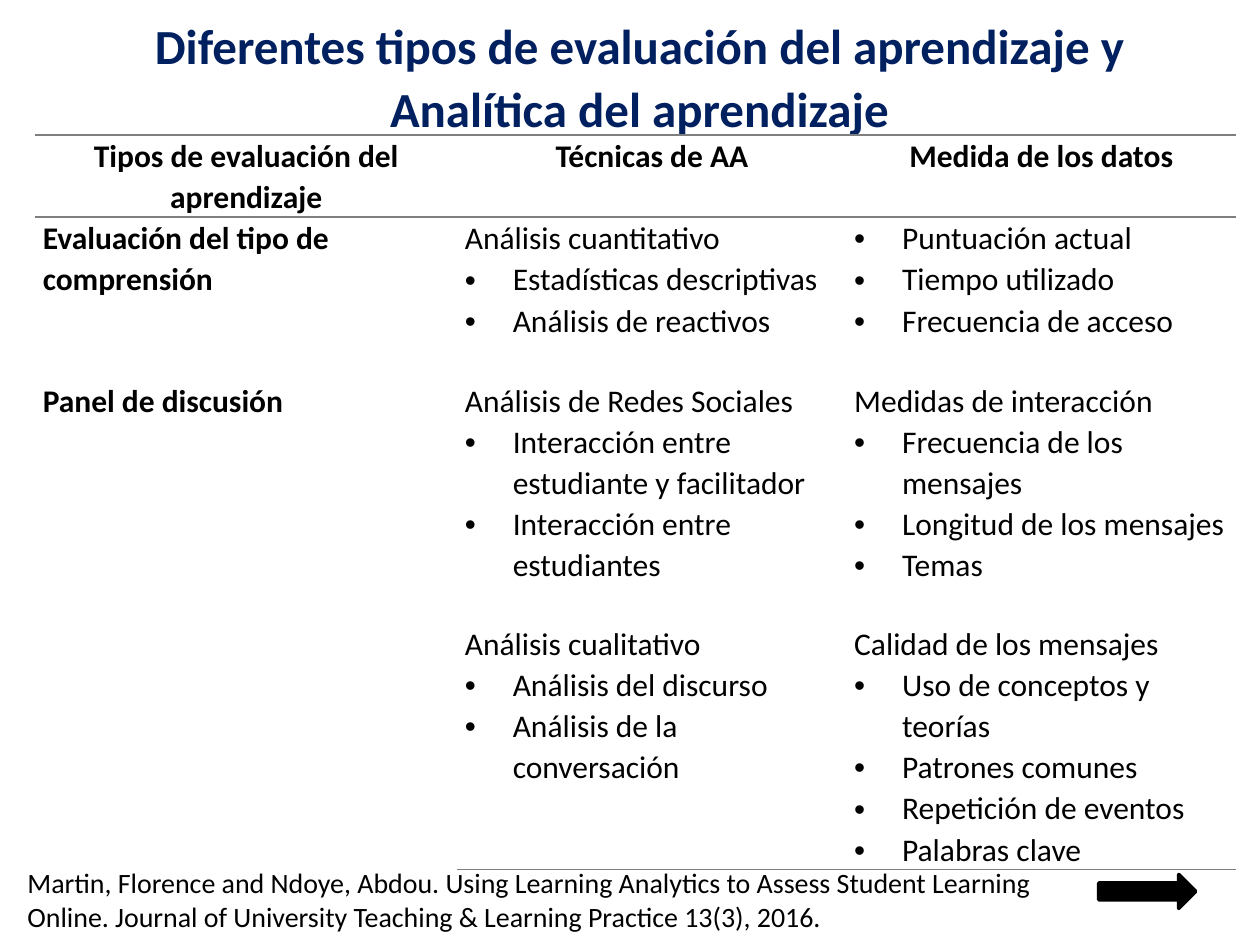
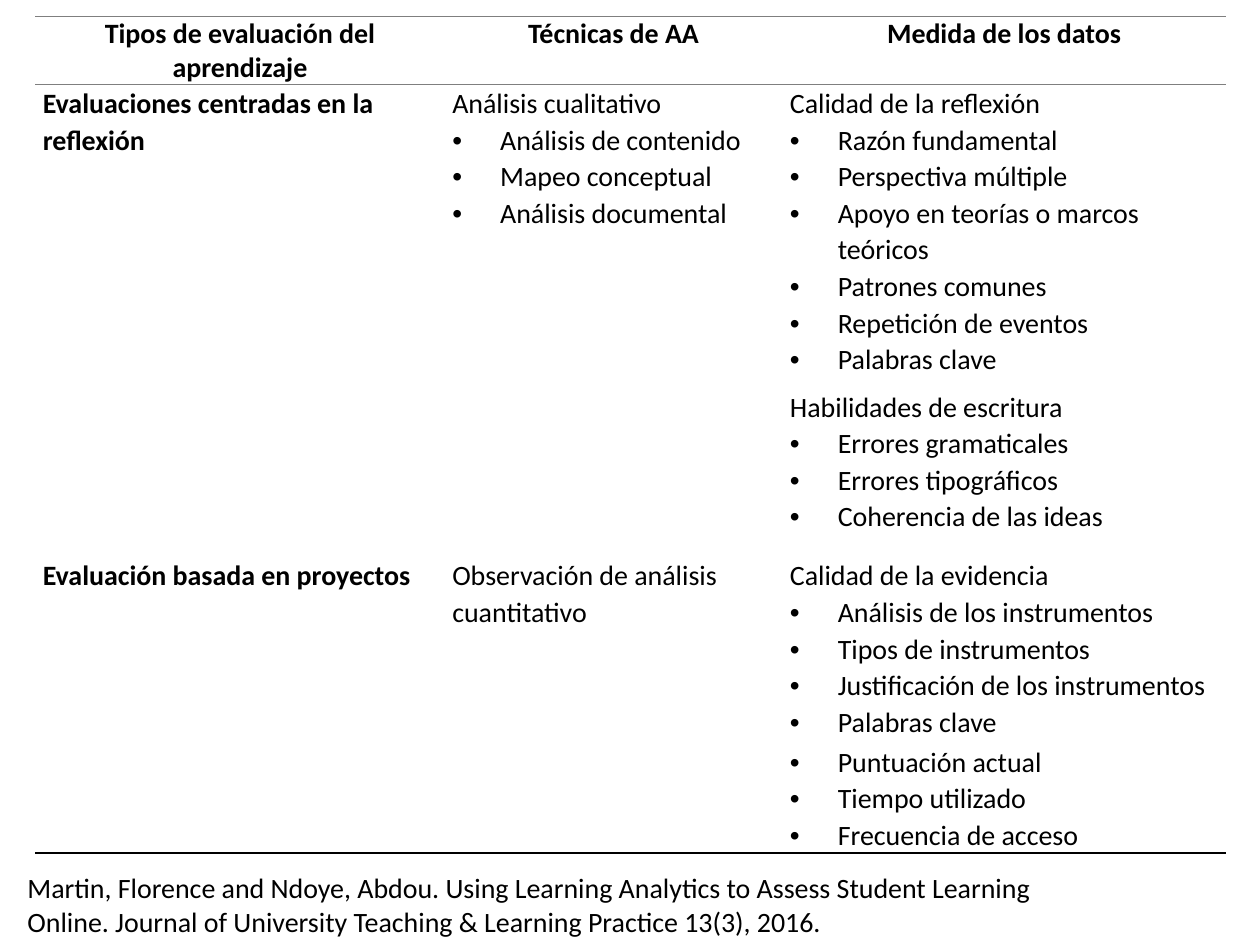
from lxml.etree import SubElement
from pptx import Presentation
from pptx.dml.color import RGBColor
from pptx.enum.shapes import MSO_SHAPE
from pptx.enum.text import MSO_ANCHOR, PP_ALIGN
from pptx.oxml import parse_xml
from pptx.oxml.ns import nsdecls, qn
from pptx.util import Inches, Pt

NAVY = RGBColor(0x00, 0x20, 0x60)
BLACK = RGBColor(0x00, 0x00, 0x00)
GRAY = RGBColor(0x7F, 0x7F, 0x7F)

FONT = "Calibri"
LOOSE = 1.07
HANGING = Inches(0.38)
PLAIN_TABLE_STYLE = "{2D5ABB26-0587-4C30-8999-92F81FD0307C}"
TITLE_ONLY, BLANK = 5, 6

HEADERS = ["Tipos de evaluación del aprendizaje", "Técnicas de AA", "Medida de los datos"]
CITATION = ("Martin, Florence and Ndoye, Abdou. Using Learning Analytics to Assess Student "
            "Learning Online. Journal of University Teaching & Learning Practice 13(3), 2016.")

# Each cell holds a lead line and its bullet points
EMPTY = ("", [])
COMPREHENSION_ROWS = [
    [("Evaluación del tipo de comprensión", []),
     ("Análisis cuantitativo", ["Estadísticas descriptivas", "Análisis de reactivos"]),
     ("", ["Puntuación actual", "Tiempo utilizado", "Frecuencia de acceso"])],
    [("Panel de discusión", []),
     ("Análisis de Redes Sociales",
      ["Interacción entre estudiante y facilitador", "Interacción entre estudiantes"]),
     ("Medidas de interacción",
      ["Frecuencia de los mensajes", "Longitud de los mensajes", "Temas"])],
    [EMPTY,
     ("Análisis cualitativo", ["Análisis del discurso", "Análisis de la conversación"]),
     ("Calidad de los mensajes",
      ["Uso de conceptos y teorías", "Patrones comunes", "Repetición de eventos",
       "Palabras clave"])],
]
REFLECTION_ROWS = [
    [("Evaluaciones centradas en la reflexión", []),
     ("Análisis cualitativo",
      ["Análisis de contenido", "Mapeo conceptual", "Análisis documental"]),
     ("Calidad de la reflexión",
      ["Razón fundamental", "Perspectiva múltiple", "Apoyo en teorías o marcos teóricos",
       "Patrones comunes", "Repetición de eventos", "Palabras clave"])],
    [EMPTY, EMPTY,
     ("Habilidades de escritura",
      ["Errores gramaticales", "Errores tipográficos", "Coherencia de las ideas"])],
    [("Evaluación basada en proyectos", []),
     ("Observación de análisis cuantitativo", []),
     ("Calidad de la evidencia",
      ["Análisis de los instrumentos", "Tipos de instrumentos",
       "Justificación de los instrumentos", "Palabras clave"])],
    [EMPTY, EMPTY,
     ("", ["Puntuación actual", "Tiempo utilizado", "Frecuencia de acceso"])],
]


def set_values(target, values):
    for name, value in values.items():
        setattr(target, name, value)


class Pages:
    """Shared style and current page, on a grid of 100 columns by 75 rows."""

    def __init__(self):
        self.deck = Presentation()
        set_values(self.deck, {"slide_width": Inches(10), "slide_height": Inches(7.5)})
        self.column = self.deck.slide_width / 100
        self.row = self.deck.slide_height / 75
        self.page = None

    def area(self, left, top, width, height):
        return [round(left * self.column), round(top * self.row),
                round(width * self.column), round(height * self.row)]

    def add_page(self, layout):
        self.page = self.deck.slides.add_slide(self.deck.slide_layouts[layout])

    def add_text(self, para, text, size, color=BLACK, bold=False, bullet=False, **layout):
        set_values(para, layout)
        span = para.add_run()
        span.text = text
        set_values(span.font, {"name": FONT, "size": Pt(size), "bold": bold})
        span.font.color.rgb = color
        if bullet:
            properties = para._p.get_or_add_pPr()
            properties.set("marL", str(HANGING))
            properties.set("indent", str(-HANGING))
            SubElement(properties, qn("a:buFont"), typeface="Arial")
            SubElement(properties, qn("a:buChar"), char="•")

    def title(self, text, *place):
        box = self.page.shapes.title
        set_values(box, dict(zip(("left", "top", "width", "height"), self.area(*place))))
        set_values(box.text_frame, {"vertical_anchor": MSO_ANCHOR.TOP, "word_wrap": True})
        self.add_text(box.text_frame.paragraphs[0], text, 28, NAVY, True,
                      alignment=PP_ALIGN.CENTER, line_spacing=LOOSE, space_after=Pt(6))

    def citation(self, top):
        box = self.page.shapes.add_textbox(*self.area(1.2, top, 84.3, 6.4))
        box.text_frame.word_wrap = True
        self.add_text(box.text_frame.paragraphs[0], CITATION, 16)

    def arrow(self, *place):
        arrow = self.page.shapes.add_shape(MSO_SHAPE.RIGHT_ARROW, *self.area(*place))
        arrow.shadow.inherit = False
        arrow.fill.solid()
        arrow.fill.fore_color.rgb = BLACK
        arrow.line.color.rgb = BLACK
        arrow.line.width = Pt(2)

    def border(self, cell, side, color):
        line = parse_xml(
            f'<a:{side} {nsdecls("a")} w="12700"><a:solidFill><a:srgbClr val="{color}"/>'
            f'</a:solidFill></a:{side}>')
        cell._tc.get_or_add_tcPr().insert(0, line)

    def fill_cell(self, cell, content, size, bold):
        lead, points = content
        lines = [(lead, False)] if lead else []
        lines += [(point, True) for point in points]
        for index, (text, bullet) in enumerate(lines):
            frame = cell.text_frame
            para = frame.add_paragraph() if index else frame.paragraphs[0]
            self.add_text(para, text, size, bold=bold, bullet=bullet, line_spacing=LOOSE)

    def table(self, left, top, widths, heights, rows, size, header_spacing, last_line):
        place = self.area(left, top, sum(widths), sum(heights))
        table = self.page.shapes.add_table(len(heights), len(widths), *place).table
        set_values(table, {"first_row": False, "horz_banding": False})
        table._tbl.tblPr.find(qn("a:tableStyleId")).text = PLAIN_TABLE_STYLE
        for column, width in zip(table.columns, widths):
            column.width = round(width * self.column)
        for row, height in zip(table.rows, heights):
            row.height = round(height * self.row)
        margins = {"margin_left": Inches(0.06), "margin_right": Inches(0.06),
                   "margin_top": 0, "margin_bottom": 0}
        for row_index, row in enumerate(table.rows):
            for column_index, cell in enumerate(row.cells):
                set_values(cell, margins)
                cell.fill.background()
                if row_index == 0:
                    self.add_text(cell.text_frame.paragraphs[0], HEADERS[column_index], size,
                                  bold=True, alignment=PP_ALIGN.CENTER,
                                  line_spacing=header_spacing)
                    self.border(cell, "lnB", GRAY)
                    self.border(cell, "lnT", GRAY)
                else:
                    content = rows[row_index - 1][column_index]
                    self.fill_cell(cell, content, size, bold=column_index == 0)
                if row_index == len(rows):
                    self.border(cell, "lnB", last_line)
        return table


def main():
    pages = Pages()

    # Comprehension and discussion
    pages.add_page(TITLE_ONLY)
    pages.title("Diferentes tipos de evaluación del aprendizaje y Analítica del aprendizaje",
                10.6, 0.4, 80.3, 11.1)
    table = pages.table(2.8, 10.7, [33.5, 30.9, 30.9], [6.4, 12.9, 19.3, 19.2],
                        COMPREHENSION_ROWS, 18, LOOSE, GRAY)
    table.cell(2, 0).merge(table.cell(3, 0))
    pages.arrow(87.2, 69.4, 7.7, 2.7)
    pages.citation(68.2)

    # Reflection and projects
    pages.add_page(BLANK)
    pages.table(2.8, 1.3, [32.5, 26.8, 35.2], [5.4, 24.1, 13.4, 14.8, 8.7],
                REFLECTION_ROWS, 16, 1.0, BLACK)
    pages.citation(68.6)

    pages.deck.save("out.pptx")


if __name__ == "__main__":
    main()
